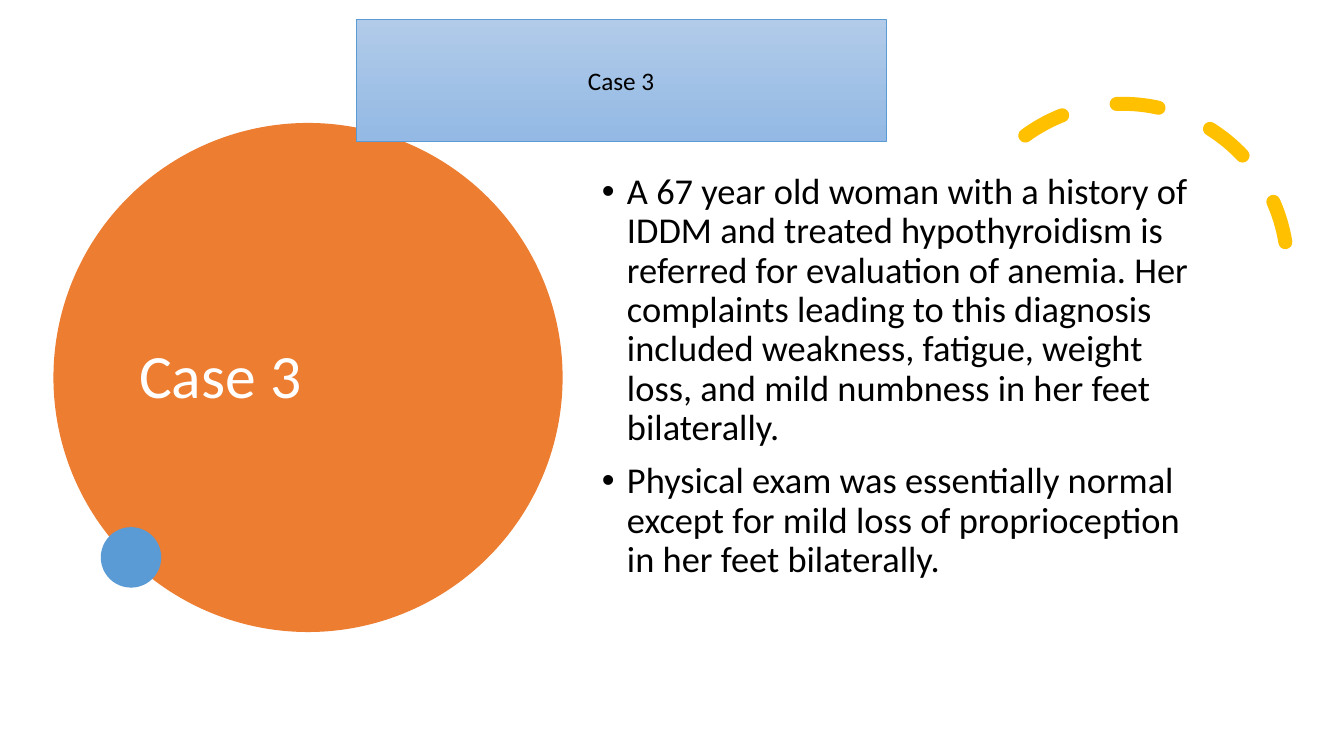
from dataclasses import dataclass

from lxml.etree import SubElement
from pptx import Presentation
from pptx.dml.color import RGBColor
from pptx.enum.dml import MSO_LINE
from pptx.enum.shapes import MSO_SHAPE as Shape
from pptx.enum.text import MSO_ANCHOR as Anchor, MSO_AUTO_SIZE as AutoSize, PP_ALIGN as Align
from pptx.oxml.ns import qn
from pptx.util import Inches, Pt

TITLE = "Case 3"
BANNER = "Case 3"
FINDINGS = [
    "A 67 year old woman with a history of IDDM and treated hypothyroidism is referred "
    "for evaluation of anemia. Her complaints leading to this diagnosis included weakness, "
    "fatigue, weight loss, and mild numbness in her feet bilaterally.",
    "Physical exam was essentially normal except for mild loss of proprioception "
    "in her feet bilaterally.",
]
BOXES = {
    "circle": (0.53, 1.22, 5.05, 5.05),
    "title": (1.28, 1.53, 3.54, 4.45),
    "arc": (9.5, 1.03, 3.27, 3.27),
    "dot": (1, 5.23, 0.6, 0.6),
    "findings": (5.87, 1.67, 6.05, 4.3),
    "banner": (3.53, 0.19, 5.26, 1.21),
}


@dataclass(frozen=True)
class Theme:
    font: str = "Calibri"
    orange: str = "ED7D31"
    blue: str = "5B9BD5"
    gold: str = "FFC000"
    white: str = "FFFFFF"
    black: str = "000000"
    banner: tuple = ("B1CBE9", "93B9E4")
    title_size: int = 44
    body_size: int = 26
    banner_size: int = 18


THEME = Theme()


def rgb(value):
    return RGBColor.from_string(value)


def box(name):
    return [Inches(value) for value in BOXES[name]]


def write(shape, texts, *, size, color, align=Align.LEFT, anchor=Anchor.MIDDLE,
          spacing=1.0, before=0, after=0, bullet=False):
    frame = shape.text_frame
    frame.word_wrap = True
    frame.auto_size = AutoSize.NONE
    frame.vertical_anchor = anchor
    for index, text in enumerate(texts):
        paragraph = frame.add_paragraph() if index else frame.paragraphs[0]
        paragraph.alignment = align
        paragraph.line_spacing = spacing
        paragraph.space_before, paragraph.space_after = Pt(before), Pt(after)
        run = paragraph.add_run()
        run.text = text
        run.font.name, run.font.size = THEME.font, Pt(size)
        run.font.color.rgb = rgb(color)
        if bullet:
            properties = paragraph._p.get_or_add_pPr()
            properties.set("marL", str(Inches(0.25)))
            properties.set("indent", str(Inches(-0.25)))
            SubElement(properties, qn("a:buFont")).set("typeface", "Arial")
            SubElement(properties, qn("a:buChar")).set("char", "•")


def add_shape(slide, kind, name, fill=None):
    shape = slide.shapes.add_shape(kind, *box(name))
    shape.shadow.inherit = False
    if fill:
        shape.fill.solid()
        shape.fill.fore_color.rgb = rgb(fill)
        shape.line.fill.background()
    return shape


def add_arc(slide):
    arc = add_shape(slide, Shape.ARC, "arc")
    arc.adjustments[0], arc.adjustments[1] = 158.17, 17.81
    arc.rotation = 330.2
    arc.fill.background()
    arc.line.color.rgb = rgb(THEME.gold)
    arc.line.width = Pt(10)
    arc.line.dash_style = MSO_LINE.DASH
    arc.line._get_or_add_ln().set("cap", "rnd")


def add_banner(slide):
    banner = add_shape(slide, Shape.RECTANGLE, "banner")
    banner.fill.gradient()
    banner.fill.gradient_angle = 270
    for stop, color in zip(banner.fill.gradient_stops, THEME.banner):
        stop.color.rgb = rgb(color)
    banner.line.color.rgb = rgb(THEME.blue)
    banner.line.width = Pt(0.5)
    write(banner, [BANNER], size=THEME.banner_size, color=THEME.black,
          align=Align.CENTER, after=6)


def main():
    presentation = Presentation()
    presentation.slide_width, presentation.slide_height = Inches(13.33), Inches(7.5)
    slide = presentation.slides.add_slide(presentation.slide_layouts[5])

    title = slide.shapes.title
    title.left, title.top, title.width, title.height = box("title")
    write(title, [TITLE], size=THEME.title_size, color=THEME.white, spacing=0.9)
    circle = add_shape(slide, Shape.OVAL, "circle", THEME.orange)
    title.element.addprevious(circle.element)

    add_arc(slide)
    add_shape(slide, Shape.OVAL, "dot", THEME.blue)
    findings = slide.shapes.add_textbox(*box("findings"))
    write(findings, FINDINGS, size=THEME.body_size, color=THEME.black,
          anchor=Anchor.TOP, spacing=0.9, before=10, bullet=True)
    add_banner(slide)
    presentation.save("out.pptx")


if __name__ == "__main__":
    main()
